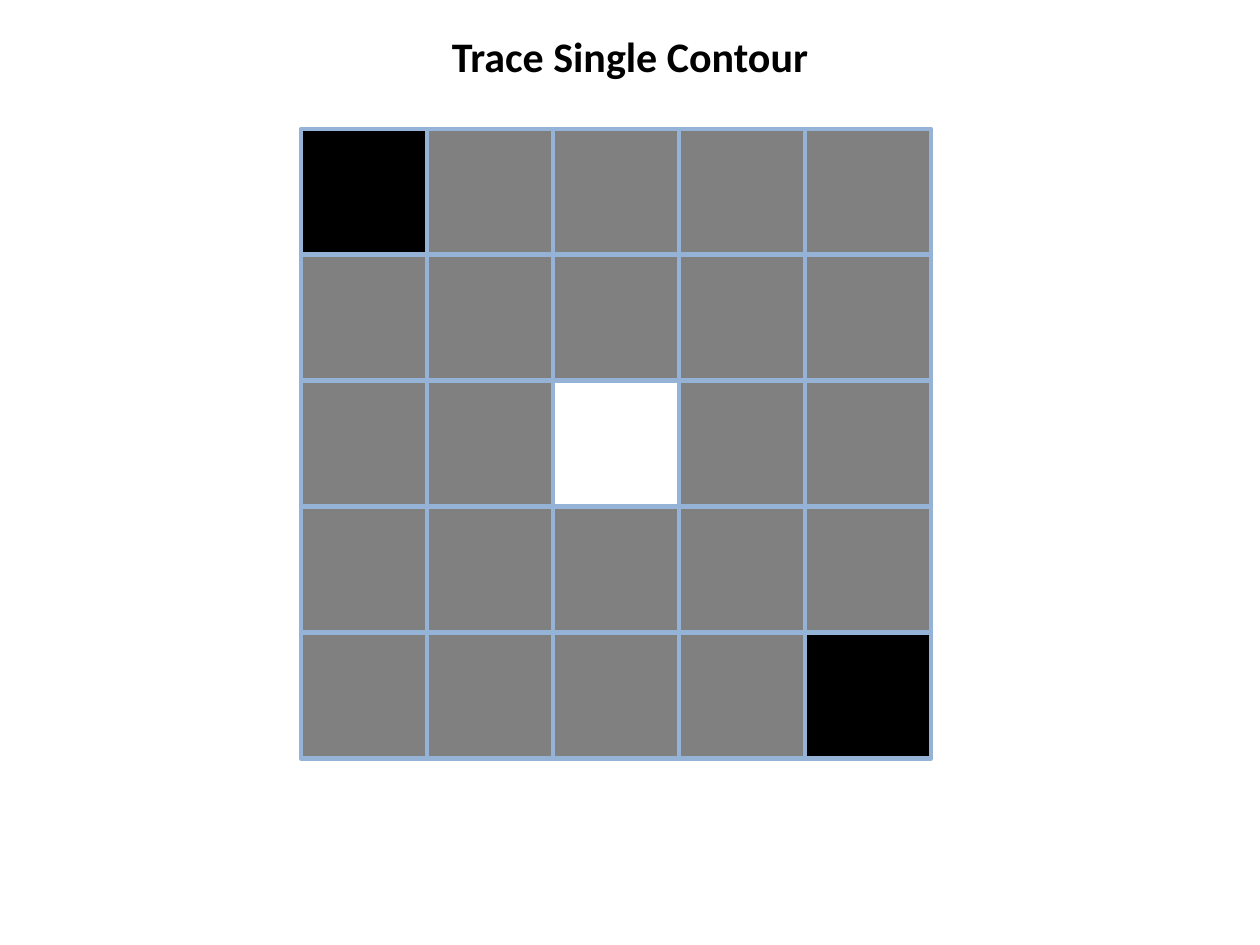
import pptx
import pptx.util
import pptx.dml.color
import pptx.enum.shapes
import pptx.enum.text

Pt = pptx.util.Pt

TITLE = "Trace Single Contour"
# One letter per cell: B black, G gray, W white
GRID = [
    "BGGGG",
    "GGGGG",
    "GGWGG",
    "GGGGG",
    "GGGGB",
]
THEME = {
    "font": "Calibri",
    "title": 24,
    "text": "000000",
    "edge": "95B3D7",
    "edge_width": 2.5,
    "B": "000000",
    "G": "808080",
    "W": "FFFFFF",
}
WIDTH, HEIGHT = 720, 540
CELL = 72
LEFT, TOP = 172, 73.6


def color(name):
    return pptx.dml.color.RGBColor.from_string(THEME[name])


def add_text(slide, text, left, top, width, height, size="title", ink="text",
             bold=False, align=pptx.enum.text.PP_ALIGN.LEFT):
    box = slide.shapes.add_textbox(Pt(left), Pt(top), Pt(width), Pt(height))
    frame = box.text_frame
    frame.word_wrap = True
    frame.auto_size = pptx.enum.text.MSO_AUTO_SIZE.SHAPE_TO_FIT_TEXT
    line = frame.paragraphs[0]
    line.alignment = align
    run = line.add_run()
    run.text = text
    run.font.name = THEME["font"]
    run.font.size = Pt(THEME[size])
    run.font.bold = bold
    run.font.color.rgb = color(ink)


def add_cell(slide, row, col, shade):
    cell = slide.shapes.add_shape(
        pptx.enum.shapes.MSO_SHAPE.RECTANGLE,
        Pt(LEFT + col * CELL), Pt(TOP + row * CELL), Pt(CELL), Pt(CELL))
    cell.shadow.inherit = False
    cell.fill.solid()
    cell.fill.fore_color.rgb = color(shade)
    cell.line.color.rgb = color("edge")
    cell.line.width = Pt(THEME["edge_width"])


def main():
    deck = pptx.Presentation()
    deck.slide_width, deck.slide_height = Pt(WIDTH), Pt(HEIGHT)
    slide = deck.slides.add_slide(deck.slide_layouts[6])
    for row, shades in enumerate(GRID):
        for col, shade in enumerate(shades):
            add_cell(slide, row, col, shade)
    add_text(slide, TITLE, 0, 13.7, WIDTH, 36, bold=True,
             align=pptx.enum.text.PP_ALIGN.CENTER)
    deck.save("out.pptx")


if __name__ == "__main__":
    main()
